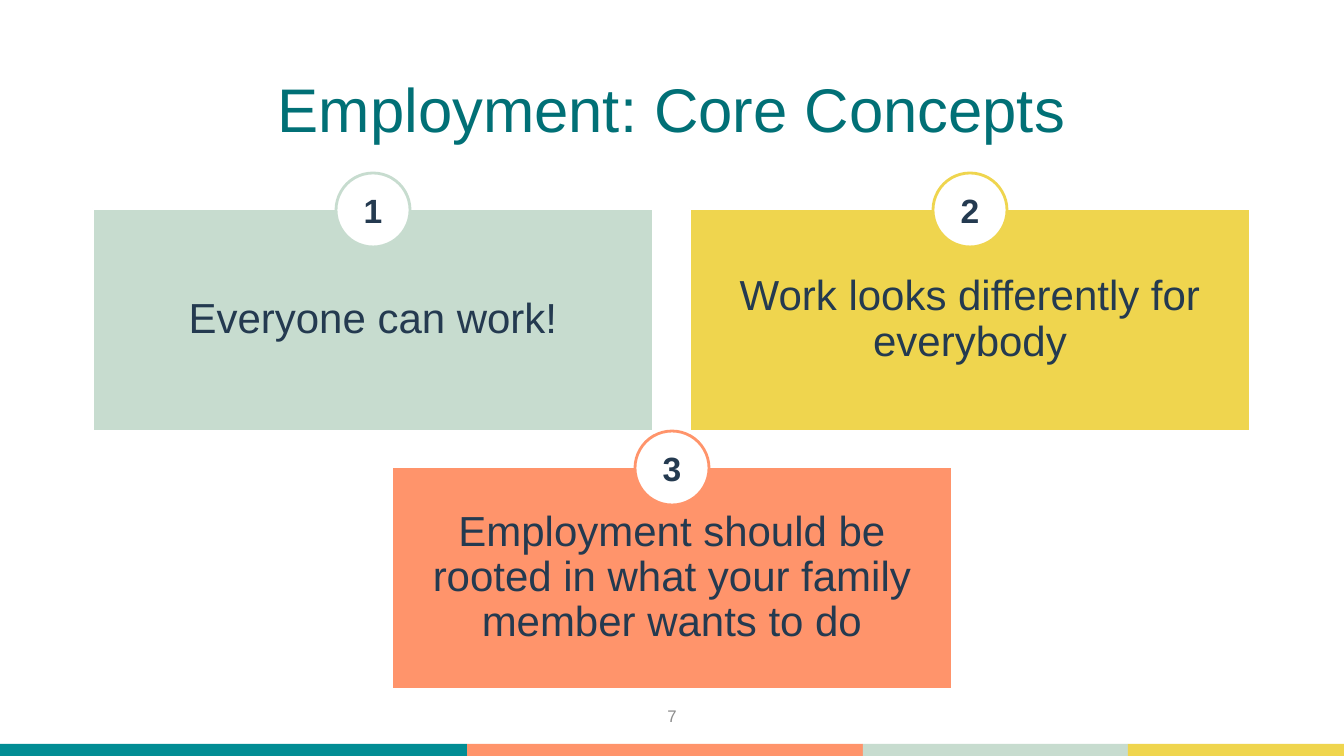
import pptx
import pptx.util
import pptx.dml.color
import pptx.enum.shapes
import pptx.enum.text

RGBColor = pptx.dml.color.RGBColor
SHAPE = pptx.enum.shapes.MSO_SHAPE

TEAL = RGBColor(0x02, 0x8D, 0x94)
DARK_TEAL = RGBColor(0x01, 0x70, 0x76)
CORAL = RGBColor(0xFF, 0x94, 0x6B)
SAGE = RGBColor(0xC7, 0xDC, 0xCF)
YELLOW = RGBColor(0xEF, 0xD5, 0x4E)
NAVY = RGBColor(0x24, 0x3A, 0x50)
GRAY = RGBColor(0x8C, 0x8C, 0x8C)
WHITE = RGBColor(0xFF, 0xFF, 0xFF)

SLIDE_W, SLIDE_H = 1344, 756
CARD_W, CARD_H = 560, 222
BADGE = 74
FONT = "Arial"


def px(length):
    """Turn slide pixels (100.8 to the inch) into EMU."""
    return pptx.util.Emu(round(length * 914400 / 100.8))


def write(shape, text, size, color, bold=False, inset=0, spacing=1.0):
    frame = shape.text_frame
    frame.word_wrap = True
    frame.auto_size = pptx.enum.text.MSO_AUTO_SIZE.NONE
    frame.vertical_anchor = pptx.enum.text.MSO_ANCHOR.MIDDLE
    frame.margin_left = frame.margin_right = px(inset)
    frame.margin_top = frame.margin_bottom = px(inset)
    frame.text = text
    paragraph = frame.paragraphs[0]
    paragraph.alignment = pptx.enum.text.PP_ALIGN.CENTER
    paragraph.line_spacing = spacing
    font = paragraph.runs[0].font
    font.name, font.size, font.bold = FONT, pptx.util.Pt(size), bold
    font.color.rgb = color


def add_filled(slide, kind, box, fill, outline=None, weight=1):
    shape = slide.shapes.add_shape(kind, *map(px, box))
    shape.shadow.inherit = False
    shape.fill.solid()
    shape.fill.fore_color.rgb = fill
    if outline is None:
        shape.line.fill.background()
    else:
        shape.line.color.rgb = outline
        shape.line.width = pptx.util.Pt(weight)
    return shape


def add_heading(slide, box, text):
    heading = slide.shapes.title
    heading.left, heading.top, heading.width, heading.height = map(px, box)
    write(heading, text, 44, DARK_TEAL, inset=5, spacing=0.9)


def add_concept(slide, box, number, text, color):
    left, top, width, _ = box
    card = add_filled(slide, SHAPE.RECTANGLE, box, color, WHITE)
    write(card, text, 30, NAVY, inset=12, spacing=0.9)
    # Numbered badge centred on the card's top edge
    badge_box = (left + (width - BADGE) / 2, top + 1 - BADGE / 2, BADGE, BADGE)
    badge = add_filled(slide, SHAPE.OVAL, badge_box, WHITE, color, 2)
    write(badge, str(number), 24, NAVY, bold=True)


def add_footer(slide, box, page):
    left, top, width, height = box
    # Colour band: each stripe runs to the start of the next
    starts = [0, 467, 863, 1128, width]
    colors = [TEAL, CORAL, SAGE, YELLOW]
    for start, end, color in zip(starts, starts[1:], colors):
        stripe_box = (left + start, top, end - start, height)
        add_filled(slide, SHAPE.RECTANGLE, stripe_box, color)
    # Page number
    number_box = (left + (width - 302) / 2, top - 48, 302, 40)
    page_number = slide.shapes.add_textbox(*map(px, number_box))
    write(page_number, page, 12, GRAY)


def main():
    deck = pptx.Presentation()
    deck.slide_width, deck.slide_height = px(SLIDE_W), px(SLIDE_H)
    slide = deck.slides.add_slide(deck.slide_layouts[5])

    add_footer(slide, (0, 744, SLIDE_W, 12), "7")
    add_heading(slide, (92, 40, 1160, 146), "Employment: Core Concepts")

    # Two cards above, one centred below
    concepts = [
        (93, 209, "Everyone can work!", SAGE),
        (690, 209, "Work looks differently for everybody", YELLOW),
        (392, 467, "Employment should be rooted in what your family "
                   "member wants to do", CORAL),
    ]
    for number, (left, top, text, color) in enumerate(concepts, start=1):
        add_concept(slide, (left, top, CARD_W, CARD_H), number, text, color)

    deck.save("out.pptx")


if __name__ == "__main__":
    main()
